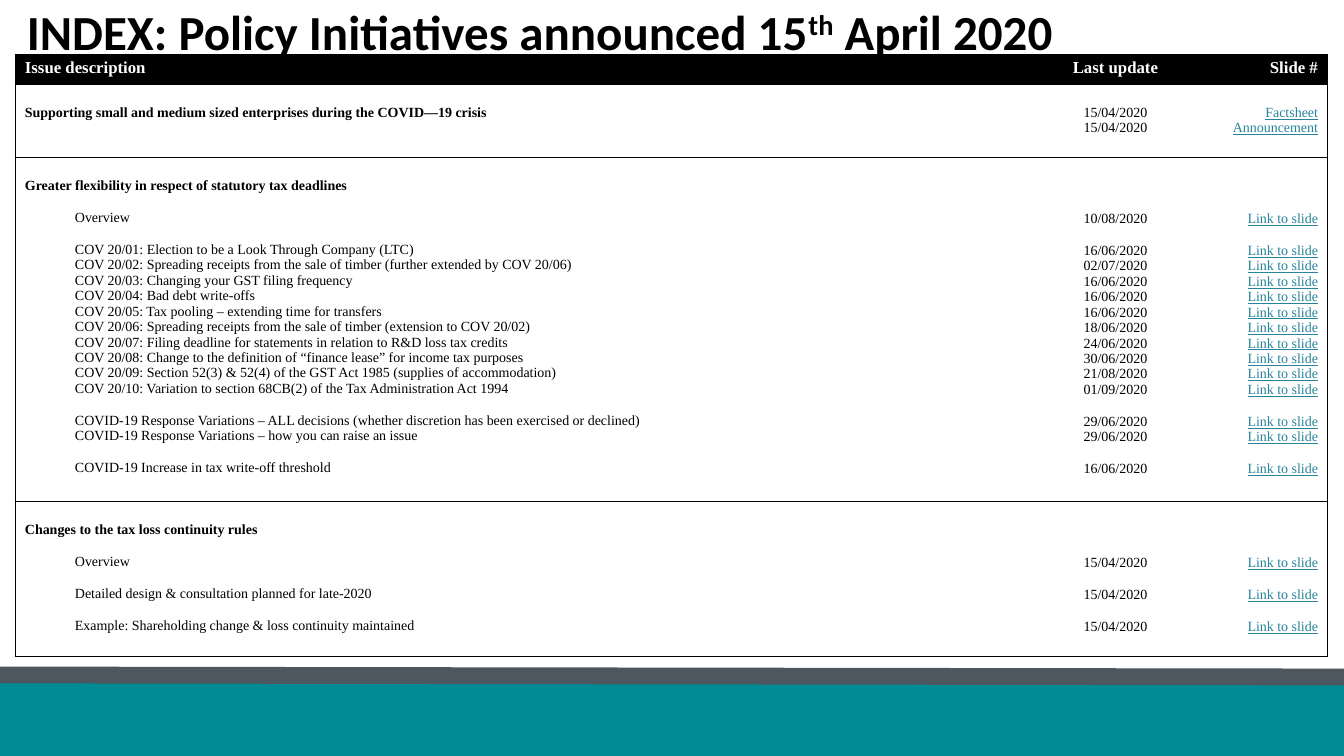
from lxml import etree
from pptx import Presentation
from pptx.dml.color import RGBColor
from pptx.enum.shapes import MSO_CONNECTOR, MSO_SHAPE
from pptx.enum.text import MSO_ANCHOR, PP_ALIGN
from pptx.oxml.ns import qn
from pptx.util import Emu, Pt

LEFT, MID, RIGHT = PP_ALIGN.LEFT, PP_ALIGN.CENTER, PP_ALIGN.RIGHT
ALIGNS = (LEFT, MID, RIGHT)
LINE, RECT = MSO_CONNECTOR.STRAIGHT, MSO_SHAPE.RECTANGLE
MIDDLE = MSO_ANCHOR.MIDDLE
WIDE, HIGH = 1344, 756
SCALE = 12192000 / WIDE
HEX = {"ink": "000000", "paper": "FFFFFF", "teal": "008B95",
       "slate": "4C575F", "link": "27849B"}

SLIDE = "Link to slide"
HEADS = ("Issue description", "Last update", "Slide #")
COLS = (1015, 171, 127)
HEAD_H = 28
PAD, DROP = 21, 54  # top inset of a section heading and of its first topic
GAP = 11.8  # points between groups of topics

# Each section: heading, row height, groups of (topic, date, link)
SECTIONS = [
    ("Supporting small and medium sized enterprises during the COVID—19 crisis", 73, [
        [("", "15/04/2020", "Factsheet"), ("", "15/04/2020", "Announcement")]]),
    ("Greater flexibility in respect of statutory tax deadlines", 341, [
        [("Overview", "10/08/2020", SLIDE)],
        [("COV 20/01: Election to be a Look Through Company (LTC)", "16/06/2020", SLIDE),
         ("COV 20/02: Spreading receipts from the sale of timber (further extended by COV 20/06)",
          "02/07/2020", SLIDE),
         ("COV 20/03: Changing your GST filing frequency", "16/06/2020", SLIDE),
         ("COV 20/04: Bad debt write-offs", "16/06/2020", SLIDE),
         ("COV 20/05: Tax pooling – extending time for transfers", "16/06/2020", SLIDE),
         ("COV 20/06: Spreading receipts from the sale of timber (extension to COV 20/02)",
          "18/06/2020", SLIDE),
         ("COV 20/07: Filing deadline for statements in relation to R&D loss tax credits",
          "24/06/2020", SLIDE),
         ("COV 20/08: Change to the definition of “finance lease” for income tax purposes",
          "30/06/2020", SLIDE),
         ("COV 20/09: Section 52(3) & 52(4) of the GST Act 1985 (supplies of accommodation)",
          "21/08/2020", SLIDE),
         ("COV 20/10: Variation to section 68CB(2) of the Tax Administration Act 1994",
          "01/09/2020", SLIDE)],
        [("COVID-19 Response Variations – ALL decisions (whether discretion has been exercised"
          " or declined)", "29/06/2020", SLIDE),
         ("COVID-19 Response Variations – how you can raise an issue", "29/06/2020", SLIDE)],
        [("COVID-19 Increase in tax write-off threshold", "16/06/2020", SLIDE)]]),
    ("Changes to the tax loss continuity rules", 155, [
        [("Overview", "15/04/2020", SLIDE)],
        [("Detailed design & consultation planned for late-2020", "15/04/2020", SLIDE)],
        [("Example: Shareholding change & loss continuity maintained", "15/04/2020", SLIDE)]]),
]


def px(n):
    return Emu(round(n * SCALE))


def tint(name):
    return RGBColor.from_string(HEX[name])


def write(para, text, size=10, font="Times New Roman", color="ink",
          bold=False, line=False, raised=False):
    run = para.add_run()
    run.text = text
    face = run.font
    face.size, face.name, face.bold, face.underline = Pt(size), font, bold, line
    face.color.rgb = tint(color)
    if raised:
        run._r.get_or_add_rPr().set("baseline", "30000")


def next_para(frame, align, gap=0, indent=0):
    para = frame.paragraphs[0]
    if para.runs:
        para = frame.add_paragraph()
        para.space_before = Pt(gap)
    para.alignment = align
    if indent:
        para._p.get_or_add_pPr().set("marL", str(px(indent)))
    return para


def edge(cell, col):
    """Rule the cell above and below, and on the table's outer sides only."""
    props = cell._tc.get_or_add_tcPr()
    shown = {"lnL": col == 0, "lnR": col == len(COLS) - 1, "lnT": True, "lnB": True}
    for tag, on in shown.items():
        rule = etree.SubElement(props, qn("a:" + tag), w=str(Pt(0.75)))
        if on:
            fill = etree.SubElement(rule, qn("a:solidFill"))
            etree.SubElement(fill, qn("a:srgbClr"), val=HEX["ink"])
        else:
            etree.SubElement(rule, qn("a:noFill"))


def open_cell(table, row, col, top, fill):
    cell = table.cell(row, col)
    edge(cell, col)
    cell.fill.solid()
    cell.fill.fore_color.rgb = tint(fill)
    cell.margin_left = cell.margin_right = px(10)
    cell.margin_top, cell.margin_bottom = px(top), px(5)
    return cell.text_frame


def fill_section(table, row, title, groups):
    topics = bool(groups[0][0][0])
    tops = (PAD,) + (DROP if topics else PAD,) * 2
    frames = [open_cell(table, row, col, top, "paper") for col, top in enumerate(tops)]
    write(next_para(frames[0], LEFT), title, bold=True)
    styles = ({}, {}, {"color": "link", "line": True})
    for group in groups:
        for i, item in enumerate(group):
            gap = 0 if i else GAP
            for col, text in enumerate(item):
                if text:
                    para = next_para(frames[col], ALIGNS[col], gap, 0 if col else 50)
                    write(para, text, **styles[col])


def index(slide, x, y):
    heights = [HEAD_H] + [high for _, high, _ in SECTIONS]
    frame = slide.shapes.add_table(len(heights), len(COLS), px(x), px(y),
                                   px(sum(COLS)), px(sum(heights)))
    table = frame.table
    table.horz_banding = False
    for col, wide in enumerate(COLS):
        table.columns[col].width = px(wide)
        head = open_cell(table, 0, col, 5, "ink")
        write(next_para(head, ALIGNS[col]), HEADS[col], size=12, color="paper", bold=True)
    for row, high in enumerate(heights):
        table.rows[row].height = px(high)
    for row, (title, _, groups) in enumerate(SECTIONS, 1):
        fill_section(table, row, title, groups)


def heading(slide, x, y, wide, high):
    frame = slide.shapes.add_textbox(px(x), px(y), px(wide), px(high)).text_frame
    frame.word_wrap = True
    frame.vertical_anchor = MIDDLE
    para = next_para(frame, LEFT)
    parts = ("INDEX: Policy Initiatives announced 15", "th", " April 2020")
    for part in parts:
        write(para, part, size=35, font="Calibri", bold=True, raised=part == "th")


def footer(slide, y):
    band = slide.shapes.add_shape(RECT, 0, px(y), px(WIDE), px(HIGH - y))
    band.shadow.inherit = False
    band.fill.solid()
    band.fill.fore_color.rgb = tint("teal")
    band.line.fill.background()
    strip = slide.shapes.add_connector(LINE, 0, px(y - 6), px(WIDE), px(y - 4))
    strip.line.color.rgb = tint("slate")
    strip.line.width = Pt(12)
    etree.SubElement(strip._element.spPr, qn("a:effectLst"))


def main():
    deck = Presentation()
    deck.slide_width, deck.slide_height = px(WIDE), px(HIGH)
    slide = deck.slides.add_slide(deck.slide_layouts[6])
    footer(slide, 681)
    heading(slide, 17, 0, 1311, 61)
    index(slide, 15, 54)
    deck.save("out.pptx")


if __name__ == "__main__":
    main()
